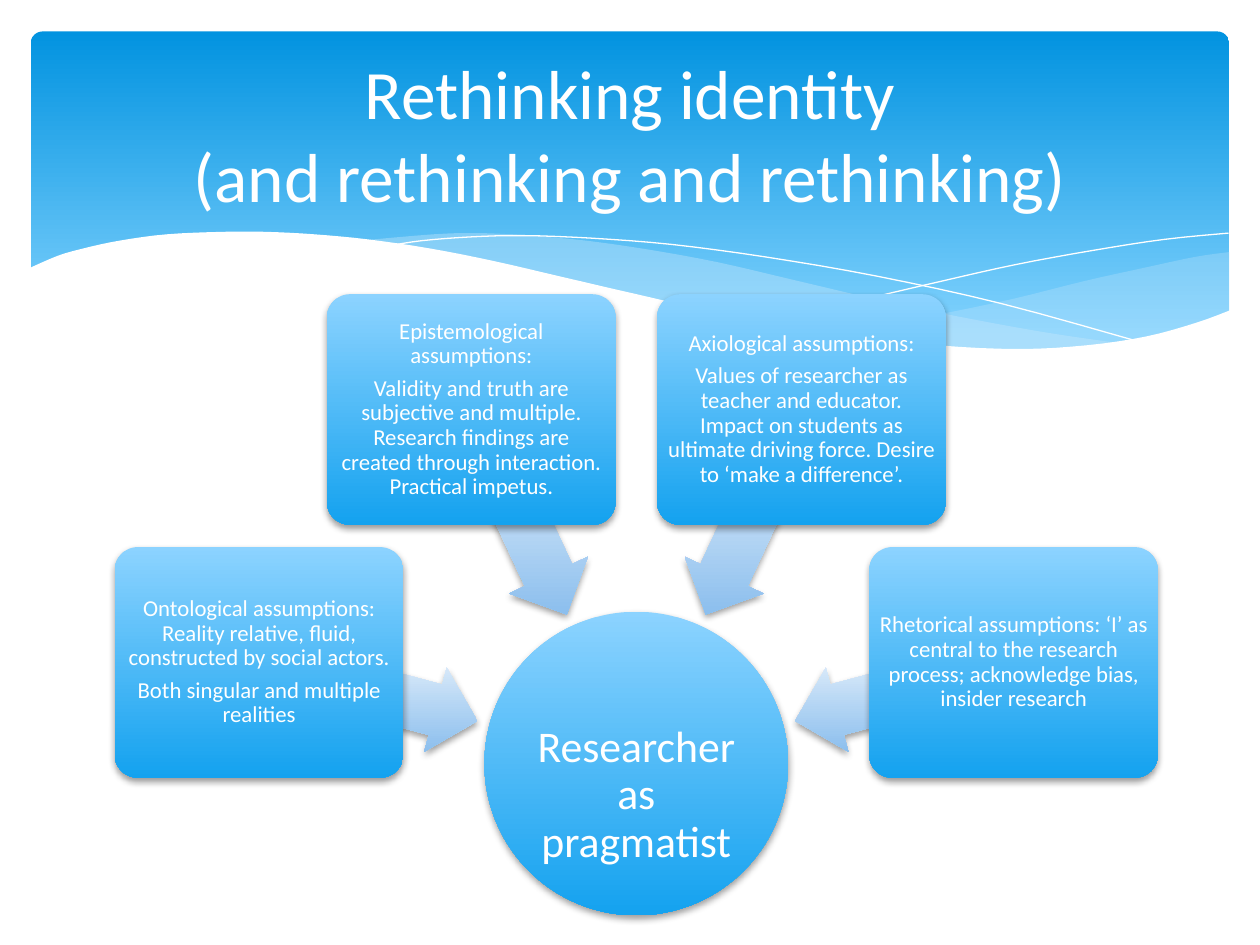
"""Build the 'Rethinking identity' slide: four assumptions converging on one hub."""
from math import cos, radians, sin

from lxml.etree import SubElement
from pptx import Presentation
from pptx.dml.color import RGBColor
from pptx.enum.shapes import MSO_SHAPE as SHAPE
from pptx.enum.text import MSO_ANCHOR as ANCHOR, MSO_AUTO_SIZE as AUTO_SIZE, PP_ALIGN as ALIGN
from pptx.oxml.ns import qn
from pptx.util import Inches, Pt

TITLE = "Rethinking identity\v(and rethinking and rethinking)"
HUB = ["Researcher as pragmatist"]
ASSUMPTIONS = [
    (195, ["Ontological assumptions: Reality relative, fluid, constructed by social actors.",
           "Both singular and multiple realities"]),
    (245, ["Epistemological assumptions:",
           "Validity and truth are subjective and multiple. Research findings are "
           "created through interaction. Practical impetus."]),
    (295, ["Axiological assumptions:",
           "Values of researcher as teacher and educator. Impact on students as "
           "ultimate driving force. Desire to ‘make a difference’."]),
    (345, ["Rhetorical assumptions: ‘I’ as central to the research process; "
           "acknowledge bias, insider research"]),
]

WHITE = RGBColor(0xFF, 0xFF, 0xFF)
PALE_BLUE = RGBColor(0xC6, 0xE7, 0xFC)
HEADER_BLUES = RGBColor(0x02, 0x93, 0xE0), RGBColor(0x83, 0xD3, 0xFE)
CARD_BLUES = RGBColor(0x8C, 0xD3, 0xFF), RGBColor(0x14, 0xA2, 0xEF)
ARROW_BLUES = WHITE, RGBColor(0x82, 0xB9, 0xEC)
FONT = "Calibri"

CENTER = 5.05, 6.06
HUB_SIZE = 2.41, 2.41
CARD_SIZE = 2.29, 1.83
ARROW_SIZE = 1.79, 0.69
CARD_RADIUS, ARROW_RADIUS = 3.1, 2.2

RIGHT_TOP = [(9.76, 2), (9.48, 2.04), (9.06, 2.13), (8.61, 2.23), (8.05, 2.37), (7.53, 2.48),
             (7.06, 2.57), (6.61, 2.65)]
RIGHT_BOTTOM = [(6.61, 2.65), (6.91, 2.69), (7.32, 2.74), (7.69, 2.77), (8.14, 2.78),
                (8.54, 2.76), (8.97, 2.7), (9.35, 2.62), (9.76, 2.47)]
MIDDLE_TOP = [(8.93, 2.73), (8.37, 2.65), (7.75, 2.54), (7.06, 2.4), (6.29, 2.22), (5.69, 2.08),
              (5.14, 1.98), (4.65, 1.91), (4.2, 1.87), (3.8, 1.85), (3.44, 1.86), (2.86, 1.91)]
MIDDLE_BOTTOM = [(2.86, 1.91), (3.42, 1.99), (4.04, 2.11), (4.49, 2.22), (5.3, 2.4), (6.01, 2.55),
                 (6.65, 2.66), (7.22, 2.74), (7.73, 2.77), (8.18, 2.78), (8.57, 2.77), (8.93, 2.73)]
LONG_LINE = [(3.09, 1.95), (3.35, 1.91), (3.74, 1.88), (4.16, 1.87), (4.69, 1.89), (5.33, 1.94),
             (6.08, 2.04), (6.95, 2.19), (7.95, 2.41), (9.07, 2.72)]
RISING_LINE = [(6.13, 2.57), (6.72, 2.41), (7.48, 2.23), (8.06, 2.1), (8.66, 1.99), (9.24, 1.9),
               (9.75, 1.85)]
WHITE_EDGE = [(9.77, 2.46), (9.5, 2.56), (9.1, 2.67), (8.63, 2.74), (8.09, 2.77), (7.44, 2.74),
              (6.68, 2.65), (5.79, 2.5), (5.03, 2.33), (4.47, 2.2), (3.91, 2.07), (3.4, 1.97),
              (2.92, 1.9), (2.5, 1.86), (2.11, 1.84), (1.77, 1.84), (1.32, 1.86), (0.95, 1.91),
              (0.67, 1.97), (0.46, 2.03), (0.23, 2.13)]
WHITE_CORNERS = [(0.23, 3.29), (9.77, 3.29)]


def smooth(points, steps=4):
    """Return the points with a Catmull-Rom curve run through them."""
    padded = [points[0], *points, points[-1]]
    curve = [points[0]]
    for a, b, c, d in zip(padded, padded[1:], padded[2:], padded[3:]):
        for t in (step / steps for step in range(1, steps + 1)):
            curve.append(tuple(
                (2 * q + (r - p) * t + (2 * p - 5 * q + 4 * r - s) * t ** 2
                 + (3 * q - p - 3 * r + s) * t ** 3) / 2
                for p, q, r, s in zip(a, b, c, d)))
    return curve


def add_wave(slide, points, fill=None, opacity=100):
    """Draw a filled wave, or an open white line when there is no fill."""
    start, *rest = [(Inches(x), Inches(y)) for x, y in points]
    builder = slide.shapes.build_freeform(*start)
    builder.add_line_segments(rest, close=fill is not None)
    wave = builder.convert_to_shape()
    wave.shadow.inherit = False
    if fill is None:
        wave.fill.background()
        wave.line.color.rgb = WHITE
        wave.line.width = Pt(0)
        return
    wave.line.fill.background()
    wave.fill.solid()
    wave.fill.fore_color.rgb = fill
    if opacity < 100:
        color = wave._element.spPr.find(qn("a:solidFill"))[0]
        SubElement(color, qn("a:alpha"), val=str(opacity * 1000))


def add_gradient_shape(slide, kind, center, size, colors, adjustments=(), last_stop=1.0,
                       rotation=0, shadow=True):
    """Add a shape around its centre with a vertical gradient."""
    (x, y), (width, height) = center, size
    shape = slide.shapes.add_shape(kind, Inches(x - width / 2), Inches(y - height / 2),
                                   Inches(width), Inches(height))
    for index, value in enumerate(adjustments):
        shape.adjustments[index] = value
    shape.rotation = rotation
    shape.line.fill.background()
    shape.fill.gradient()
    shape.fill.gradient_angle = 270
    for stop, color, position in zip(shape.fill.gradient_stops, colors, (0, last_stop)):
        stop.color.rgb = color
        stop.position = position
    properties = shape._element.spPr
    properties.find(qn("a:gradFill")).set("rotWithShape", "0")
    shape.shadow.inherit = False
    if shadow:
        outer = SubElement(properties.find(qn("a:effectLst")), qn("a:outerShdw"),
                           blurRad=str(Pt(4)), dist=str(Pt(2)), dir="5400000", rotWithShape="0")
        SubElement(SubElement(outer, qn("a:srgbClr"), val="000000"), qn("a:alpha"), val="38000")
    return shape


def write(shape, paragraphs, size, inset=0.03, top=None, spacing=0.9, after=0):
    """Write centred white paragraphs into a shape."""
    frame = shape.text_frame
    frame.word_wrap = True
    frame.auto_size = AUTO_SIZE.NONE
    frame.vertical_anchor = ANCHOR.MIDDLE
    frame.margin_left = frame.margin_right = frame.margin_bottom = Inches(inset)
    frame.margin_top = Inches(inset if top is None else top)
    for index, text in enumerate(paragraphs):
        paragraph = frame.add_paragraph() if index else frame.paragraphs[0]
        paragraph.text = text
        paragraph.alignment = ALIGN.CENTER
        paragraph.line_spacing = spacing
        paragraph.space_after = Pt(after)
        for run in paragraph.runs:
            run.font.name = FONT
            run.font.size = Pt(size)
            run.font.color.rgb = WHITE


def around_hub(angle, radius):
    """Return the point at an angle and distance from the hub."""
    x, y = CENTER
    return x + radius * cos(radians(angle)), y + radius * sin(radians(angle))


def main():
    """Build and save the slide."""
    deck = Presentation()
    deck.slide_width, deck.slide_height = Inches(10), Inches(7.5)
    slide = deck.slides.add_slide(deck.slide_layouts[5])

    add_gradient_shape(slide, SHAPE.ROUNDED_RECTANGLE, (5, 1.6), (9.51, 2.7), HEADER_BLUES,
                       adjustments=[0.034], last_stop=0.9, shadow=False)
    add_wave(slide, smooth(RIGHT_TOP) + smooth(RIGHT_BOTTOM), fill=PALE_BLUE, opacity=29)
    add_wave(slide, smooth(MIDDLE_TOP) + smooth(MIDDLE_BOTTOM), fill=PALE_BLUE, opacity=40)
    add_wave(slide, smooth(LONG_LINE))
    add_wave(slide, smooth(RISING_LINE))
    add_wave(slide, smooth(WHITE_EDGE) + WHITE_CORNERS, fill=WHITE)

    title = slide.shapes.title
    title.left, title.top, title.width, title.height = map(Inches, (0.5, 0.37, 9, 1.37))
    write(title, [TITLE], 39.6, inset=0.05, spacing=1)
    slide.shapes._spTree.append(title._element)

    hub = add_gradient_shape(slide, SHAPE.OVAL, CENTER, HUB_SIZE, CARD_BLUES)
    write(hub, HUB, 25, inset=0.02, top=0.53)
    for angle, paragraphs in ASSUMPTIONS:
        add_gradient_shape(slide, SHAPE.LEFT_ARROW, around_hub(angle, ARROW_RADIUS), ARROW_SIZE,
                           ARROW_BLUES, adjustments=[0.6, 0.5], rotation=angle)
        card = add_gradient_shape(slide, SHAPE.ROUNDED_RECTANGLE, around_hub(angle, CARD_RADIUS),
                                  CARD_SIZE, CARD_BLUES, adjustments=[0.1])
        write(card, paragraphs, 13, after=4.5)

    deck.save("out.pptx")


if __name__ == "__main__":
    main()
